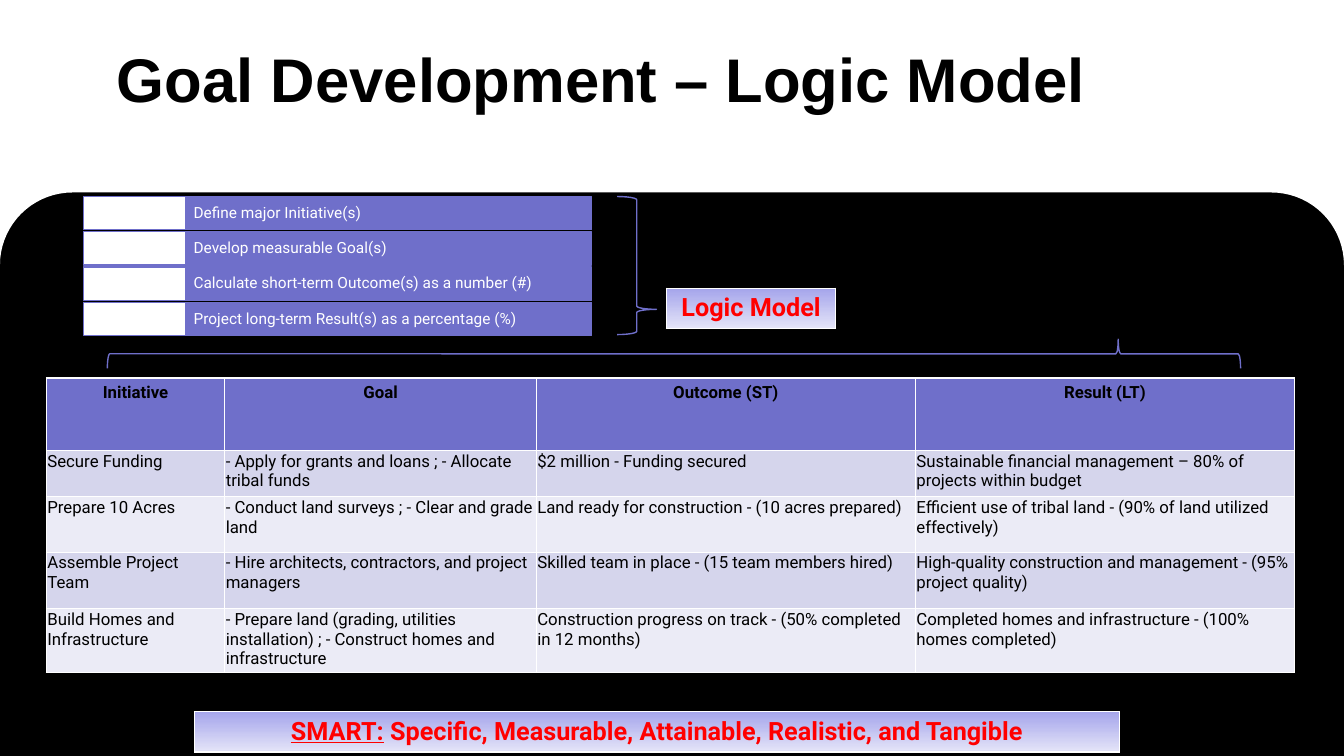
from math import cos, radians, sin

from lxml import etree
from pptx import Presentation
from pptx.dml.color import RGBColor
from pptx.enum.shapes import MSO_SHAPE as SHAPE
from pptx.enum.text import MSO_ANCHOR as ANCHOR, MSO_AUTO_SIZE as AUTO, PP_ALIGN as ALIGN
from pptx.oxml.ns import qn
from pptx.util import Pt

PX = 9144
WIDTH, HEIGHT = 1333, 750
BLACK = RGBColor(0x00, 0x00, 0x00)
WHITE = RGBColor(0xFF, 0xFF, 0xFF)
RED = RGBColor(0xFF, 0x00, 0x00)
VIOLET = RGBColor(0x6F, 0x6F, 0xCA)
BAND_DARK = RGBColor(0xD5, 0xD5, 0xEC)
BAND_LIGHT = RGBColor(0xEB, 0xEB, 0xF6)
GRADIENT = RGBColor(0xA5, 0xA5, 0xEB), RGBColor(0xE4, 0xE4, 0xF8)

STEPS = [
    "Define major Initiative(s)",
    "Develop measurable Goal(s)",
    "Calculate short-term Outcome(s) as a number (#)",
    "Project long-term Result(s) as a percentage (%)",
]
PLAN = [
    ["Initiative", "Goal", "Outcome (ST)", "Result (LT)"],
    ["Secure Funding",
     "- Apply for grants and loans ; - Allocate tribal funds",
     "$2 million - Funding secured",
     "Sustainable financial management – 80% of projects within budget"],
    ["Prepare 10 Acres",
     "- Conduct land surveys ; - Clear and grade land",
     "Land ready for construction - (10 acres prepared)",
     "Efficient use of tribal land - (90% of land utilized effectively)"],
    ["Assemble Project Team",
     "- Hire architects, contractors, and project managers",
     "Skilled team in place - (15 team members hired)",
     "High-quality construction and management - (95% project quality)"],
    ["Build Homes and Infrastructure",
     "- Prepare land (grading, utilities installation) ; - Construct homes and infrastructure",
     "Construction progress on track - (50% completed in 12 months)",
     "Completed homes and infrastructure - (100% homes completed)"],
]


def px(*lengths):
    return [round(length * PX) for length in lengths]


def set_font(font, name, size, color, bold=False):
    font.name, font.size, font.bold = name, Pt(size), bold
    font.color.rgb = color


def set_margins(target, left, top, right, bottom):
    (target.margin_left, target.margin_top,
     target.margin_right, target.margin_bottom) = px(left, top, right, bottom)


def add_header_band(s, edge, radius):
    def arc(cx, start):
        return [px(cx + radius * cos(radians(a)), edge + radius - radius * sin(radians(a)))
                for a in range(start, start + 91, 5)]

    builder = s.shapes.build_freeform(0, 0)
    builder.add_line_segments(
        [px(WIDTH, 0)] + arc(WIDTH - radius, 0) + arc(radius, 90))
    band = builder.convert_to_shape()
    band.shadow.inherit = False
    band.fill.solid()
    band.fill.fore_color.rgb = WHITE
    band.line.fill.background()
    band.element.getparent().insert(2, band.element)


def add_title(s, text):
    title = s.shapes.title
    title.left, title.top, title.width, title.height = px(106, 40, 1090, 147)
    tf = title.text_frame
    tf.text = text
    tf.auto_size = AUTO.NONE
    tf.vertical_anchor = ANCHOR.TOP
    set_margins(tf, 10, 9, 10, 5)
    p = tf.paragraphs[0]
    p.alignment, p.line_spacing = ALIGN.LEFT, 0.9
    set_font(p.runs[0].font, "Arial", 44, BLACK, True)


def add_box(shapes, left, top, width, height, fill):
    box = shapes.add_shape(SHAPE.RECTANGLE, *px(left, top, width, height))
    box.shadow.inherit = False
    box.fill.solid()
    box.fill.fore_color.rgb = fill
    box.line.color.rgb, box.line.width = VIOLET, Pt(1)
    return box


def add_step(shapes, top, text):
    tf = add_box(shapes, 184, top, 403, 33, VIOLET).text_frame
    tf.text = text
    tf.word_wrap = True
    tf.vertical_anchor = ANCHOR.MIDDLE
    set_margins(tf, 8, 8, 8, 8)
    p = tf.paragraphs[0]
    p.alignment, p.line_spacing = ALIGN.LEFT, 0.9
    set_font(p.runs[0].font, "Roboto", 11, WHITE)
    add_box(shapes, 83, top, 101, 33, WHITE)


def add_brace(s, left, top, width, height, point, rotation=0):
    brace = s.shapes.add_shape(SHAPE.RIGHT_BRACE, *px(left, top, width, height))
    brace.shadow.inherit = False
    brace.adjustments[0], brace.adjustments[1] = 0.083, point
    brace.rotation = rotation
    brace.fill.background()
    brace.line.color.rgb, brace.line.width = VIOLET, Pt(1)


def set_borders(cell):
    tc_pr = cell._tc.get_or_add_tcPr()
    for i, side in enumerate(("lnL", "lnR", "lnT", "lnB")):
        ln = etree.Element(qn(f"a:{side}"), w=str(Pt(1)))
        fill = etree.SubElement(ln, qn("a:solidFill"))
        etree.SubElement(fill, qn("a:srgbClr"), val=str(WHITE))
        tc_pr.insert(i, ln)


def add_table(s, left, top, widths, heights):
    frame = s.shapes.add_table(len(heights), len(widths),
                               *px(left, top, sum(widths), sum(heights)))
    table = frame.table
    for column, width in zip(table.columns, widths):
        column.width = width * PX
    for row, height in zip(table.rows, heights):
        row.height = height * PX
    return table


def add_plan(s):
    table = add_table(s, 46, 375, [177, 309, 376, 376], [72, 46, 55, 56, 63])
    for i, row in enumerate(PLAN):
        header = i == 0
        color = VIOLET if header else BAND_DARK if i % 2 else BAND_LIGHT
        for j, text in enumerate(row):
            cell = table.cell(i, j)
            cell.fill.solid()
            cell.fill.fore_color.rgb = color
            set_borders(cell)
            set_margins(cell, *((10, 5, 10, 5) if header else (1, 1, 1, 0)))
            cell.text_frame.text = text
            p = cell.text_frame.paragraphs[0]
            p.alignment = ALIGN.CENTER if header else ALIGN.LEFT
            set_font(p.runs[0].font, "Roboto", 12, BLACK, header)


def add_label(s, left, top, width, text, underlined=""):
    cell = add_table(s, left, top, [width], [40]).cell(0, 0)
    cell.fill.gradient()
    cell.fill.gradient_angle = 270
    for stop, color in zip(cell.fill.gradient_stops, GRADIENT):
        stop.color.rgb = color
    set_borders(cell)
    set_margins(cell, 10, 5, 10, 5)
    p = cell.text_frame.paragraphs[0]
    p.alignment = ALIGN.CENTER
    for part in filter(None, (underlined, text)):
        r = p.add_run()
        r.text = part
        set_font(r.font, "Roboto", 18, RED, True)
        r.font.underline = part == underlined


def main():
    prs = Presentation()
    prs.slide_width, prs.slide_height = px(WIDTH, HEIGHT)
    s = prs.slides.add_slide(prs.slide_layouts[5])
    s.background.fill.solid()
    s.background.fill.fore_color.rgb = BLACK
    add_header_band(s, 191, 72)
    add_title(s, "Goal Development – Logic Model")
    steps = s.shapes.add_group_shape()
    for i, text in enumerate(STEPS):
        add_step(steps.shapes, 195 + 35 * i, text)
    add_plan(s)
    add_label(s, 661, 286, 168, "Logic Model")
    add_label(s, 193, 706, 917,
              " Specific, Measurable, Attainable, Realistic, and Tangible", "SMART:")
    add_brace(s, 612, 195, 39, 137, 0.817)
    add_brace(s, 654, -211, 29, 1124, 0.892, 270)
    prs.save("out.pptx")


if __name__ == "__main__":
    main()
